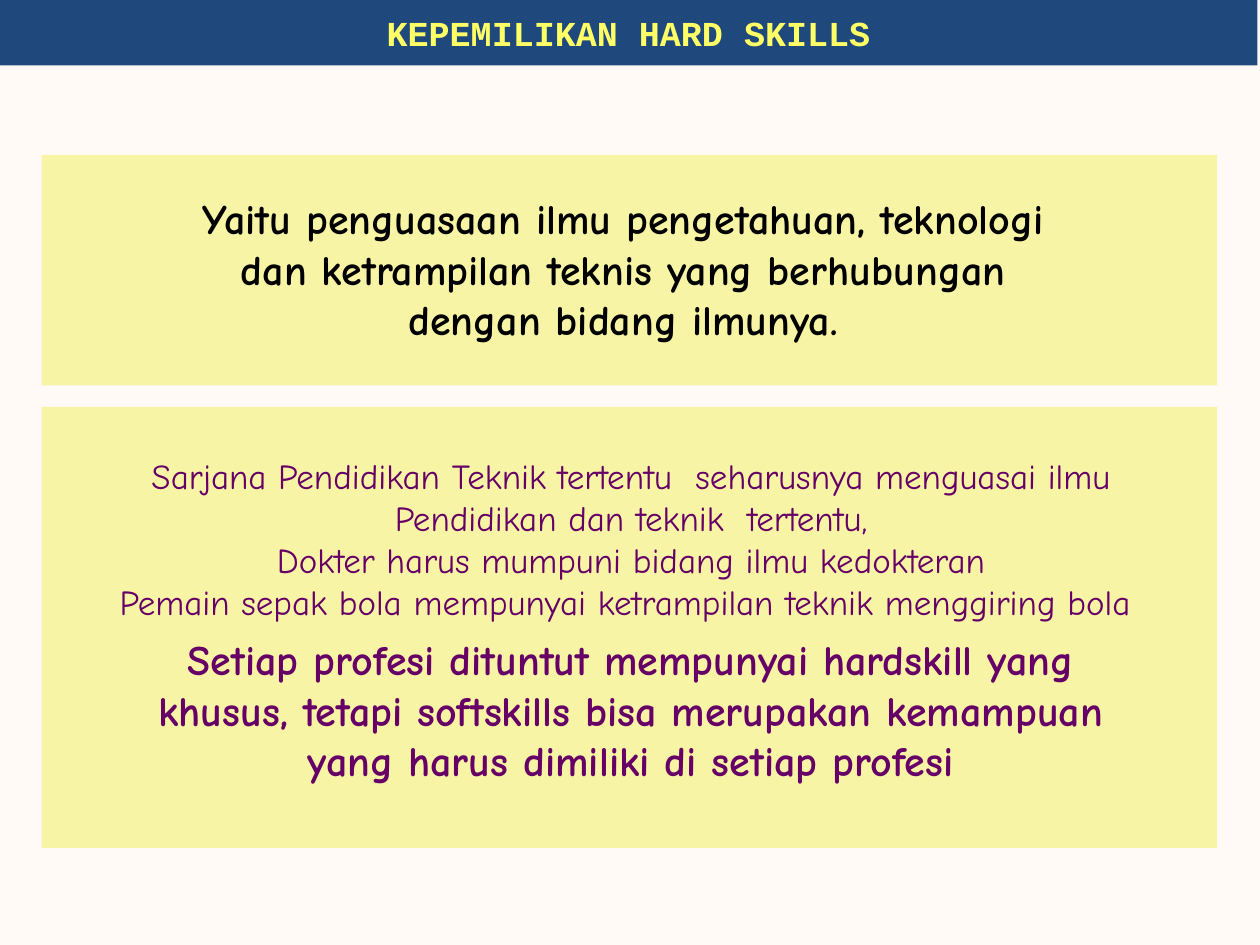
from pptx import Presentation
from pptx.dml.color import RGBColor
from pptx.enum.shapes import MSO_SHAPE as Shape
from pptx.enum.text import MSO_ANCHOR as Anchor, MSO_AUTO_SIZE as AutoSize, PP_ALIGN as Align
from pptx.util import Inches, Pt

BODY_FONT, TITLE_FONT = "Comic Neue", "Courier New"
CREAM, YELLOW, NAVY = "FFFAF6", "F8F4A6", "1F497D"
BLACK, PURPLE, LEMON = "000000", "660066", "FFFF66"

DEFINITION = [
    "Yaitu penguasaan ilmu pengetahuan, teknologi dan ketrampilan teknis "
    "yang berhubungan dengan bidang ilmunya.",
]
EXAMPLES = [
    "Sarjana Pendidikan Teknik tertentu  seharusnya menguasai ilmu "
    "Pendidikan dan teknik  tertentu,",
    "Dokter harus mumpuni bidang ilmu kedokteran",
    "Pemain sepak bola mempunyai ketrampilan teknik menggiring bola ",
]
CONCLUSION = [
    "Setiap profesi dituntut mempunyai hardskill yang khusus, tetapi softskills "
    "bisa merupakan kemampuan yang harus dimiliki di setiap profesi",
]


def paint(fill, color):
    """Give a fill one solid colour from a hex string."""
    fill.solid()
    fill.fore_color.rgb = RGBColor.from_string(color)


def write(frame, lines, size, color, font=BODY_FONT, bold=False):
    """Write centred paragraphs of one run each into a text frame."""
    for index, line in enumerate(lines):
        paragraph = frame.paragraphs[0] if index == 0 else frame.add_paragraph()
        paragraph.alignment = Align.CENTER
        run = paragraph.add_run()
        run.text = line
        run.font.size, run.font.name, run.font.bold = Pt(size), font, bold
        run.font.color.rgb = RGBColor.from_string(color)


def add_panel(shapes, left, top, width, height):
    """Add a plain yellow panel."""
    panel = shapes.add_shape(
        Shape.RECTANGLE, Inches(left), Inches(top), Inches(width), Inches(height))
    panel.shadow.inherit = False
    paint(panel.fill, YELLOW)
    panel.line.fill.background()


def add_text(shapes, box, lines, size, color, bold=False):
    """Add a wrapping text box that fits its lines."""
    frame = shapes.add_textbox(*map(Inches, box)).text_frame
    frame.word_wrap = True
    frame.auto_size = AutoSize.SHAPE_TO_FIT_TEXT
    write(frame, lines, size, color, bold=bold)


def add_title(slide, left, top, width, height):
    """Turn the title placeholder into the header band."""
    title = slide.shapes.title
    title.left, title.top = Inches(left), Inches(top)
    title.width, title.height = Inches(width), Inches(height)
    paint(title.fill, NAVY)
    frame = title.text_frame
    frame.auto_size = AutoSize.NONE
    frame.word_wrap = False
    frame.vertical_anchor = Anchor.MIDDLE
    write(frame, ["KEPEMILIKAN HARD SKILLS"], 20, LEMON, TITLE_FONT, bold=True)


def add_definition(slide, left, top, width, height):
    """Group the definition with its panel."""
    shapes = slide.shapes.add_group_shape().shapes
    add_panel(shapes, left, top, width, height)
    add_text(shapes, (left + 1, top + 0.25, 7.23, 1.3), DEFINITION, 24, BLACK, bold=True)


def add_professions(slide, left, top, width, height):
    """Place the examples and the conclusion on their panel."""
    add_panel(slide.shapes, left, top, width, height)
    add_text(slide.shapes, (left + 0.22, top + 0.33, 8.92, 1.45), EXAMPLES, 20, PURPLE)
    add_text(slide.shapes, (left + 0.59, top + 1.75, 8.17, 1.3), CONCLUSION, 24, PURPLE,
             bold=True)


def main():
    """Build the slide and save it."""
    deck = Presentation()
    deck.slide_width, deck.slide_height = Inches(10), Inches(7.5)
    slide = deck.slides.add_slide(deck.slide_layouts[5])
    paint(slide.background.fill, CREAM)
    add_title(slide, 0, 0, 9.98, 0.52)
    add_definition(slide, 0.33, 1.23, 9.33, 1.83)
    add_professions(slide, 0.33, 3.23, 9.33, 3.5)
    deck.save("out.pptx")


if __name__ == "__main__":
    main()
